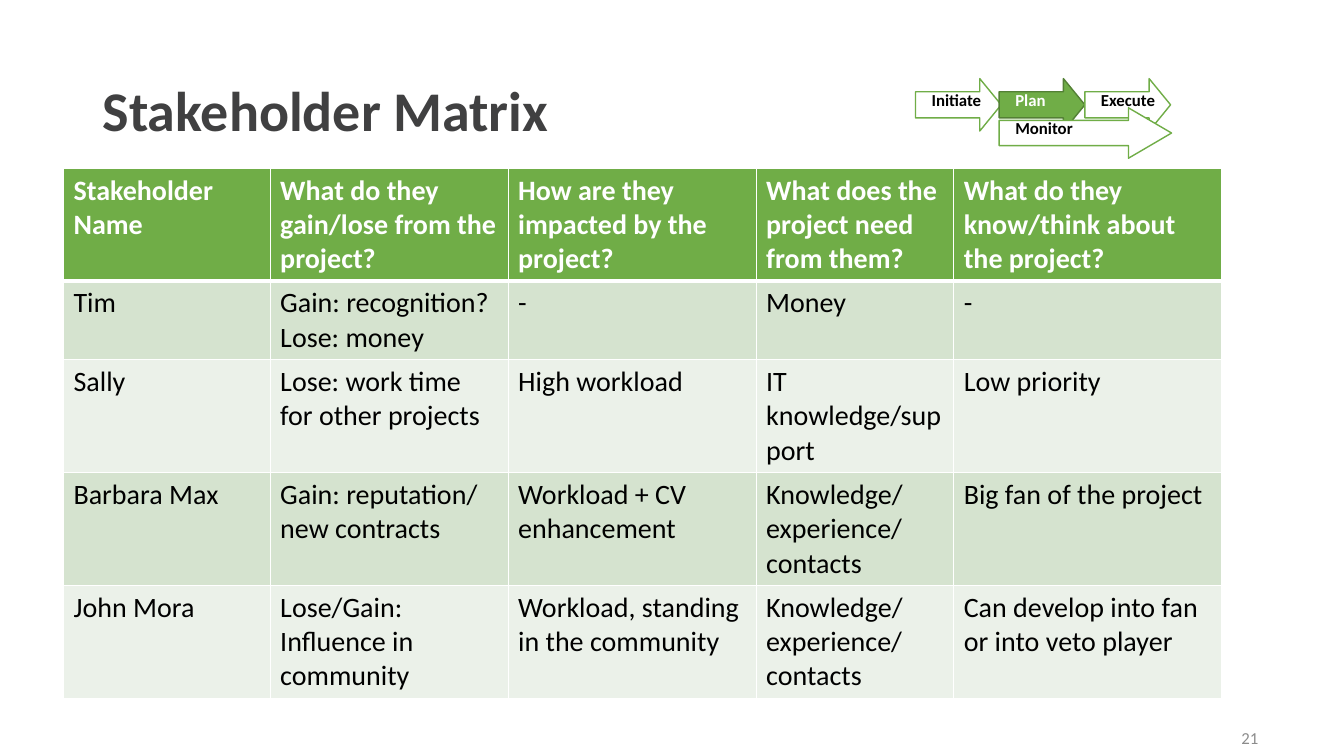
"""Build the stakeholder matrix slide with its project phase arrows."""
from lxml import etree
from pptx import Presentation
from pptx.dml.color import RGBColor
from pptx.enum.shapes import MSO_SHAPE
from pptx.enum.text import MSO_ANCHOR, PP_ALIGN
from pptx.oxml.ns import qn
from pptx.util import Inches, Pt

RIGHT_ARROW = MSO_SHAPE.RIGHT_ARROW
TOP, MIDDLE = MSO_ANCHOR.TOP, MSO_ANCHOR.MIDDLE
LEFT, RIGHT = PP_ALIGN.LEFT, PP_ALIGN.RIGHT

FONT = "Calibri"
GREEN, DARK_GREEN = "70AD47", "538035"
WHITE, BLACK = "FFFFFF", "000000"
BANDS = ("D5E3CF", "EBF1E9")

TITLE = "Stakeholder Matrix"
PAGE_NUMBER = "21"
MATRIX = [
    ("Stakeholder Name", "What do they gain/lose from the project?",
     "How are they impacted by the project?", "What does the project need from them?",
     "What do they know/think about the project?"),
    ("Tim", "Gain: recognition?\nLose: money", "-", "Money", "-"),
    ("Sally", "Lose: work time for other projects", "High workload",
     "IT knowledge/support", "Low priority"),
    ("Barbara Max", "Gain: reputation/ new contracts", "Workload + CV enhancement",
     "Knowledge/experience/ contacts", "Big fan of the project"),
    ("John Mora", "Lose/Gain: Influence in community", "Workload, standing in the community",
     "Knowledge/experience/ contacts", "Can develop into fan or into veto player"),
]
COLUMN_WIDTHS = (2.05, 2.36, 2.46, 1.96, 2.66)
ROW_HEIGHTS = (1.12, 0.78, 1.12, 1.12, 1.12)
PHASES = [
    ("Initiate", 9.08, 0.78, 0.85, 0.52, WHITE, GREEN, BLACK),
    ("Plan", 9.91, 0.78, 0.85, 0.52, GREEN, DARK_GREEN, WHITE),
    ("Execute", 10.76, 0.78, 0.85, 0.52, WHITE, GREEN, BLACK),
    ("Monitor", 9.91, 1.07, 1.71, 0.5, WHITE, GREEN, BLACK),
]
HEAD_SHARE = 0.25


def rgb(value):
    return RGBColor.from_string(value)


def write(text_frame, text, size, color, bold=False, align=LEFT, spacing=1.0):
    text_frame.text = text
    text_frame.word_wrap = True
    for paragraph in text_frame.paragraphs:
        paragraph.alignment = align
        paragraph.line_spacing = spacing
        for run in paragraph.runs:
            run.font.name = FONT
            run.font.size = Pt(size)
            run.font.bold = bold
            run.font.color.rgb = rgb(color)


def add_text(slide, box, text, size, color, **style):
    text_frame = slide.shapes.add_textbox(*map(Inches, box)).text_frame
    write(text_frame, text, size, color, **style)
    text_frame.vertical_anchor = MIDDLE


def set_borders(cell, top, bottom):
    properties = cell._tc.get_or_add_tcPr()
    for side, width in (("L", 1), ("R", 1), ("T", top), ("B", bottom)):
        line = etree.SubElement(properties, qn(f"a:ln{side}"), w=str(Pt(width)))
        fill = etree.SubElement(line, qn("a:solidFill"))
        etree.SubElement(fill, qn("a:srgbClr"), val=WHITE)


def add_matrix(slide):
    table = slide.shapes.add_table(
        len(MATRIX), len(COLUMN_WIDTHS), Inches(0.63), Inches(1.67),
        Inches(sum(COLUMN_WIDTHS)), Inches(sum(ROW_HEIGHTS))).table
    for column, width in zip(table.columns, COLUMN_WIDTHS):
        column.width = Inches(width)
    for index, (row, height, texts) in enumerate(zip(table.rows, ROW_HEIGHTS, MATRIX)):
        row.height = Inches(height)
        header = index == 0
        for cell, text in zip(row.cells, texts):
            write(cell.text_frame, text, 20, WHITE if header else BLACK, bold=header)
            set_borders(cell, 3 if index == 1 else 1, 3 if header else 1)
            cell.fill.solid()
            cell.fill.fore_color.rgb = rgb(GREEN if header else BANDS[(index - 1) % 2])


def add_phase(slide, label, left, top, width, height, fill, line, color):
    arrow = slide.shapes.add_shape(RIGHT_ARROW, *map(Inches, (left, top, width, height)))
    arrow.adjustments[0] = 0.5
    arrow.adjustments[1] = HEAD_SHARE * width / height
    arrow.shadow.inherit = False
    arrow.fill.solid()
    arrow.fill.fore_color.rgb = rgb(fill)
    arrow.line.color.rgb = rgb(line)
    arrow.line.width = Pt(1)
    text_frame = arrow.text_frame
    write(text_frame, label, 12, color, bold=True, spacing=0.9)
    text_frame.vertical_anchor = TOP
    text_frame.margin_left = Inches(0.16)
    text_frame.margin_top = text_frame.margin_right = text_frame.margin_bottom = 0


def main():
    presentation = Presentation()
    presentation.slide_width = Inches(13.33)
    presentation.slide_height = Inches(7.5)
    slide = presentation.slides.add_slide(presentation.slide_layouts[6])
    add_text(slide, (0.92, 0.4, 11.5, 1.45), TITLE, 40, "404041", bold=True, spacing=0.9)
    add_matrix(slide)
    add_text(slide, (9.58, 7.12, 3, 0.4), PAGE_NUMBER, 12, "8C8C8C", align=RIGHT)
    for phase in PHASES:
        add_phase(slide, *phase)
    presentation.save("out.pptx")


if __name__ == "__main__":
    main()
